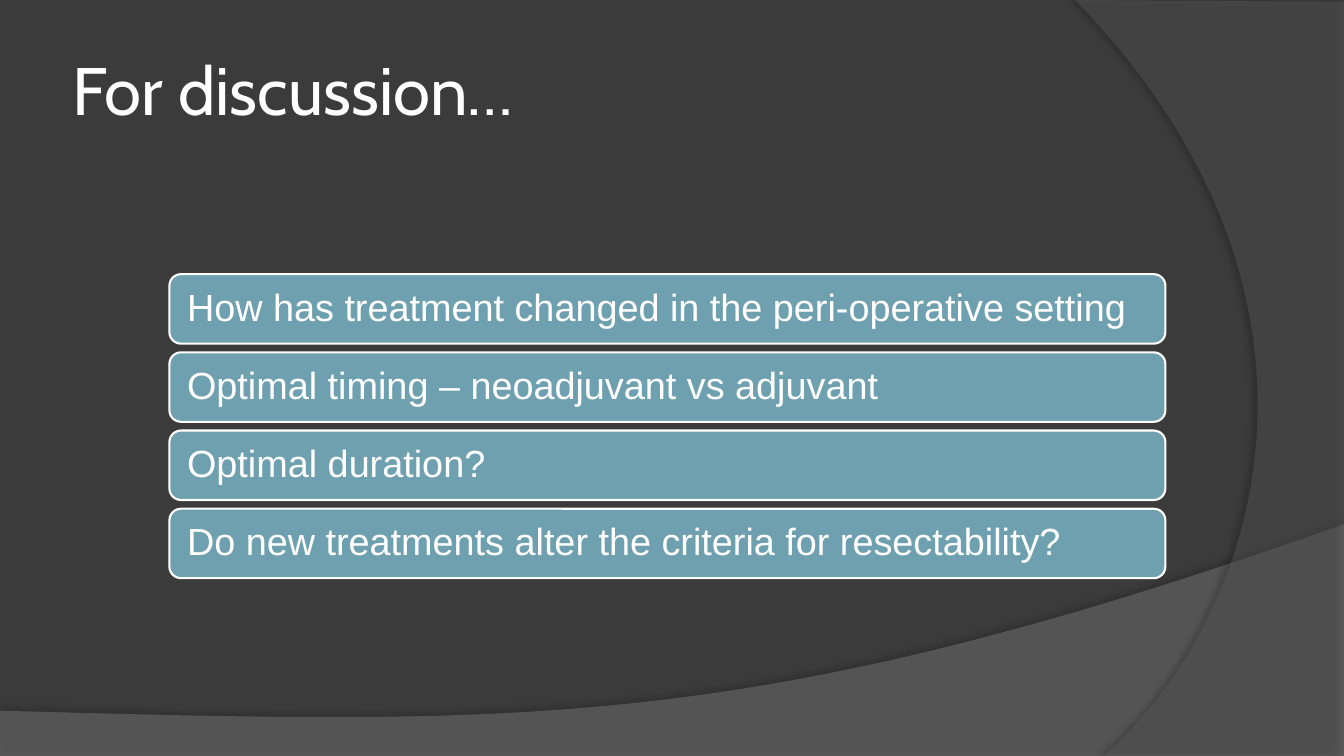
import pptx
import pptx.dml.color
import pptx.enum.shapes
import pptx.enum.text
import pptx.oxml
import pptx.oxml.ns
import pptx.util
from pptx.util import Cm, Pt

WHITE = "FFFFFF"
TOPICS = [
    "How has treatment changed in the peri-operative setting",
    "Optimal timing – neoadjuvant vs adjuvant",
    "Optimal duration?",
    "Do new treatments alter the criteria for resectability?",
]


def paint(fill, color):
    fill.solid()
    fill.fore_color.rgb = pptx.dml.color.RGBColor.from_string(color)


def write(shape, text, font="Arial", size=27, color=WHITE, inset=0.36):
    frame = shape.text_frame
    frame.word_wrap = True
    frame.vertical_anchor = pptx.enum.text.MSO_ANCHOR.MIDDLE
    frame.margin_left = frame.margin_right = Cm(inset)
    frame.margin_top = frame.margin_bottom = Cm(0.13)
    para = frame.paragraphs[0]
    para.alignment = pptx.enum.text.PP_ALIGN.LEFT
    para.line_spacing = 0.9
    run = para.add_run()
    run.text = text
    run.font.name = font
    run.font.size = Pt(size)
    paint(run.font.fill, color)


def curve(p0, p1, p2, p3, steps=60):
    """Points along a cubic curve, after its start."""
    points = []
    for i in range(1, steps + 1):
        t = i / steps
        u = 1 - t
        points.append(tuple(
            u**3 * a + 3 * u * u * t * b + 3 * u * t * t * c + t**3 * d
            for a, b, c, d in zip(p0, p1, p2, p3)))
    return points


def add_swoosh(slide, edges, bend, color, alpha, shade, dist, angle):
    points = [(Cm(x), Cm(y)) for x, y in edges + curve(edges[-1], *bend)]
    form = slide.shapes.build_freeform(*points[0])
    form.add_line_segments(points[1:], close=True)
    shape = form.convert_to_shape()
    shape.line.fill.background()
    paint(shape.fill, color)
    # Sheer fill and soft outer shadow
    space = pptx.oxml.ns.nsdecls("a")
    tone = shape.fill._xPr.find(".//" + pptx.oxml.ns.qn("a:srgbClr"))
    tone.append(pptx.oxml.parse_xml(f'<a:alpha {space} val="{alpha * 1000}"/>'))
    shape.shadow.inherit = False
    effects = shape._element.spPr.find(pptx.oxml.ns.qn("a:effectLst"))
    effects.append(pptx.oxml.parse_xml(
        f'<a:outerShdw {space} blurRad="{Pt(4)}" dist="{Pt(dist)}" '
        f'dir="{angle * 60000}" algn="ctr" rotWithShape="0">'
        f'<a:srgbClr val="000000"><a:alpha val="{shade * 1000}"/></a:srgbClr>'
        '</a:outerShdw>'))


def add_bar(slide, top, text):
    bar = slide.shapes.add_shape(
        pptx.enum.shapes.MSO_SHAPE.ROUNDED_RECTANGLE,
        Cm(4.27), Cm(top), Cm(25.1), Cm(1.75))
    bar.shadow.inherit = False
    paint(bar.fill, "6EA0B0")
    paint(bar.line.fill, WHITE)
    bar.line.width = Pt(1.5)
    write(bar, text)


def main():
    deck = pptx.Presentation()
    deck.slide_width, deck.slide_height = Cm(33.87), Cm(19.05)
    slide = deck.slides.add_slide(deck.slide_layouts[6])
    paint(slide.background.fill, "3B3B3B")

    # Backdrop: wave along the foot, arc at the right
    add_swoosh(slide, [(0, 17.91), (0, 19.08), (33.87, 19.08), (33.87, 13.21)],
               [(18.92, 18.52), (13.23, 18.26), (0, 17.91)],
               "7F7F7F", alpha=45, shade=35, dist=3.5, angle=270)
    add_swoosh(slide, [(33.87, 0.05), (33.87, 19.05), (27.81, 19.05)],
               [(31.65, 15.72), (34.47, 7.62), (27.1, 0)],
               "5E5E5E", alpha=40, shade=45, dist=4, angle=180)

    # Title
    title = slide.shapes.add_textbox(Cm(1.7), Cm(0.76), Cm(27.66), Cm(3.18))
    write(title, "For discussion…", font="Cabin", size=48, inset=0.13)

    # Topics
    for i, topic in enumerate(TOPICS):
        add_bar(slide, 6.91 + 1.97 * i, topic)

    deck.save("out.pptx")


if __name__ == "__main__":
    main()
